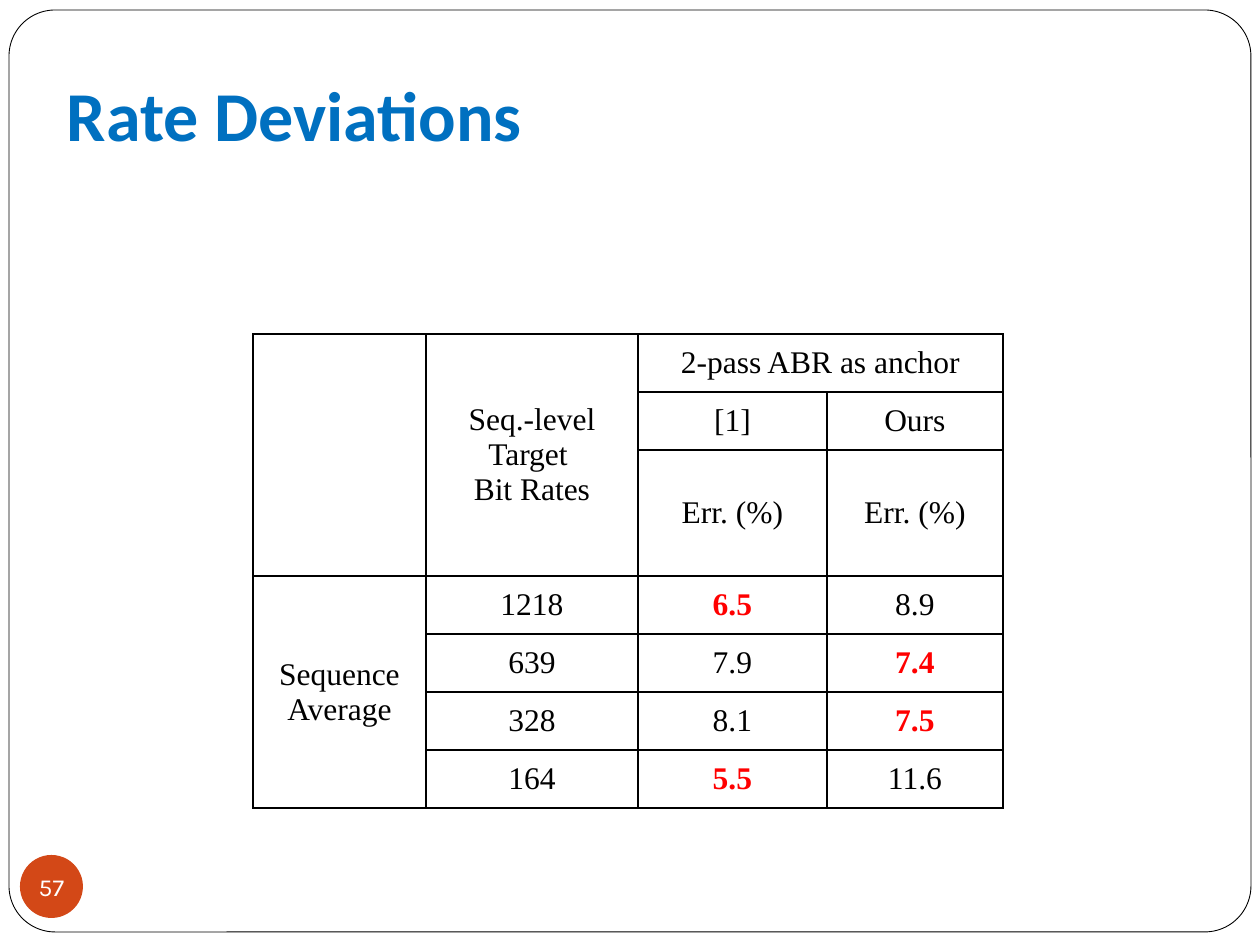
from lxml import etree
from pptx import Presentation
from pptx import util as u
from pptx.dml.color import RGBColor
from pptx.enum import shapes, text
from pptx.oxml import ns

PX = 914400 / 126
BLACK = RGBColor(0x00, 0x00, 0x00)
WHITE = RGBColor(0xFF, 0xFF, 0xFF)
BLUE = RGBColor(0x00, 0x70, 0xC0)
ORANGE = RGBColor(0xD3, 0x48, 0x17)
RED = RGBColor(0xFF, 0x00, 0x00)

COLUMN_WIDTHS = [173, 212, 189, 176]
ROW_HEIGHTS = [58, 58, 117, 58, 58, 58, 58]
RATES = [
    ["", "Seq.-level Target \nBit Rates", "2-pass ABR as anchor", ""],
    ["", "", "[1]", "Ours"],
    ["", "", "Err. (%)", "Err. (%)"],
    ["Sequence Average", "1218", "6.5", "8.9"],
    ["", "639", "7.9", "7.4"],
    ["", "328", "8.1", "7.5"],
    ["", "164", "5.5", "11.6"],
]
MERGES = [((0, 0), (2, 0)), ((0, 1), (2, 1)), ((0, 2), (0, 3)), ((3, 0), (6, 0))]
BEST = {(3, 2), (4, 3), (5, 3), (6, 2)}


def px(*lengths):
    """Turn pixel lengths into EMU."""
    return [u.Emu(round(length * PX)) for length in lengths]


def write(frame, content, size, font, color, bold=False, align=text.PP_ALIGN.CENTER):
    """Fill a text frame with one paragraph per line."""
    for index, line in enumerate(content.split("\n")):
        paragraph = frame.add_paragraph() if index else frame.paragraphs[0]
        paragraph.alignment = align
        run = paragraph.add_run()
        run.text = line
        run.font.size = u.Pt(size)
        run.font.name = font
        run.font.bold = bold
        run.font.color.rgb = color


def set_insets(frame, left, top, right, bottom):
    """Set the four text margins in pixels."""
    (frame.margin_left, frame.margin_top,
     frame.margin_right, frame.margin_bottom) = px(left, top, right, bottom)


def add_panel(slide, preset, box, fill, line=None):
    """Add a filled preset shape with an optional thin outline."""
    panel = slide.shapes.add_shape(preset, *px(*box))
    panel.shadow.inherit = False
    panel.fill.solid()
    panel.fill.fore_color.rgb = fill
    if line is None:
        panel.line.fill.background()
    else:
        panel.line.color.rgb = line
        panel.line.width = u.Pt(0.5)
    return panel


def add_title(slide, content):
    """Add the slide heading."""
    frame = slide.shapes.add_textbox(*px(54, 62, 1187, 106)).text_frame
    frame.word_wrap = True
    frame.vertical_anchor = text.MSO_ANCHOR.BOTTOM
    set_insets(frame, 13, 6, 13, 13)
    write(frame, content, 40, "Calibri", BLUE, bold=True, align=text.PP_ALIGN.LEFT)


def add_page_badge(slide, number):
    """Add the round page number."""
    badge = add_panel(slide, shapes.MSO_SHAPE.OVAL, (20, 855, 63, 63), ORANGE)
    frame = badge.text_frame
    frame.word_wrap = False
    frame.vertical_anchor = text.MSO_ANCHOR.MIDDLE
    set_insets(frame, 0, 0, 0, 0)
    write(frame, number, 14, "Karla", WHITE)


def add_borders(cell):
    """Draw a 1 pt border on every side of a cell."""
    properties = cell._tc.get_or_add_tcPr()
    for side in ("lnL", "lnR", "lnT", "lnB"):
        border = etree.SubElement(properties, ns.qn(f"a:{side}"), w=str(u.Pt(1)))
        fill = etree.SubElement(border, ns.qn("a:solidFill"))
        etree.SubElement(fill, ns.qn("a:srgbClr"), val=str(BLACK))


def add_rate_table(slide):
    """Add the table of rate errors with its merged headings."""
    box = px(253, 334, sum(COLUMN_WIDTHS), sum(ROW_HEIGHTS))
    table = slide.shapes.add_table(len(RATES), len(COLUMN_WIDTHS), *box).table
    table.first_row = table.horz_banding = False
    for column, width in zip(table.columns, px(*COLUMN_WIDTHS)):
        column.width = width
    for row, height in zip(table.rows, px(*ROW_HEIGHTS)):
        row.height = height
    for start, end in MERGES:
        table.cell(*start).merge(table.cell(*end))
    for r, row in enumerate(RATES):
        for c, content in enumerate(row):
            cell = table.cell(r, c)
            add_borders(cell)
            cell.fill.background()
            cell.vertical_anchor = text.MSO_ANCHOR.MIDDLE
            best = (r, c) in BEST
            if content:
                write(cell.text_frame, content, 18, "Times New Roman",
                      RED if best else BLACK, bold=best)


def main():
    """Build and save the slide."""
    deck = Presentation()
    deck.slide_width, deck.slide_height = px(1260, 945)
    slide = deck.slides.add_slide(deck.slide_layouts[6])
    frame = add_panel(slide, shapes.MSO_SHAPE.ROUNDED_RECTANGLE,
                      (9, 10, 1242, 922), WHITE, BLACK)
    frame.adjustments[0] = 0.05
    add_title(slide, "Rate Deviations")
    add_page_badge(slide, "57")
    add_rate_table(slide)
    deck.save("out.pptx")


if __name__ == "__main__":
    main()
